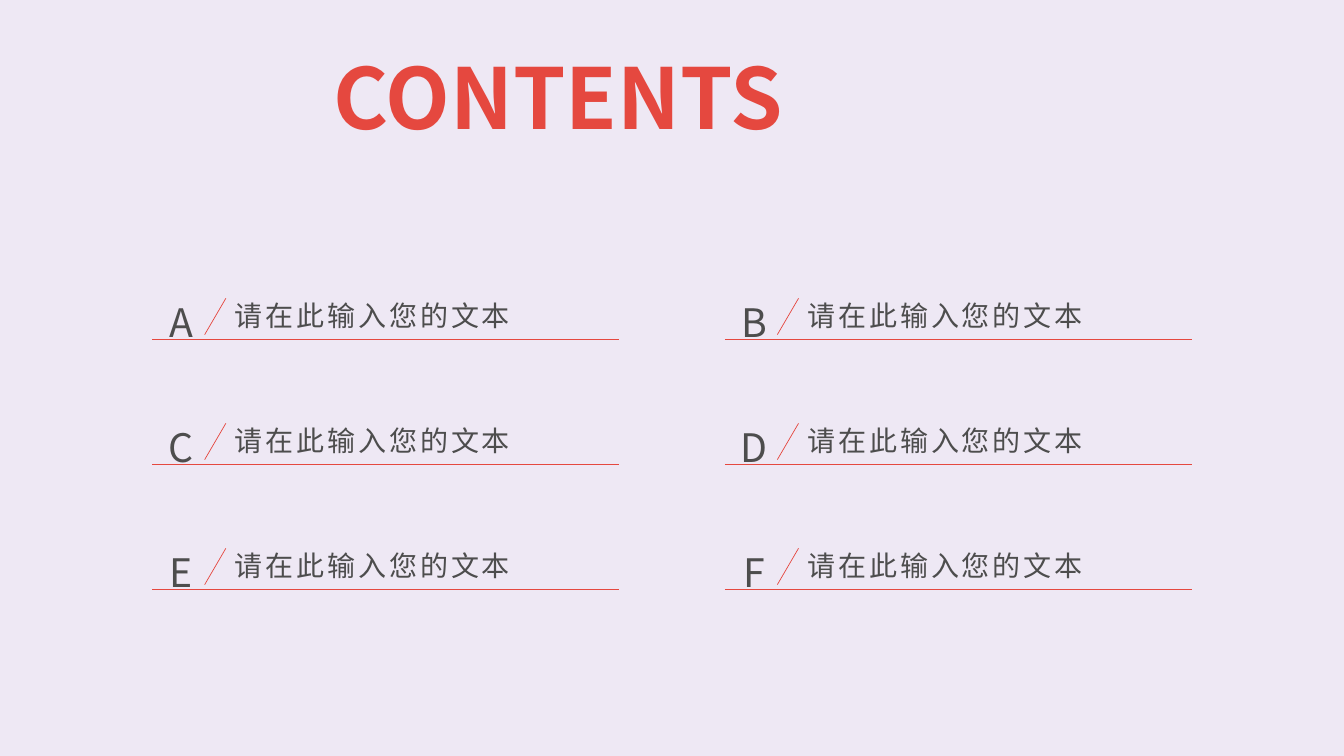
from lxml import etree
from pptx import Presentation
from pptx import util as u
from pptx.dml.color import RGBColor
from pptx.enum import shapes, text
from pptx.oxml.ns import qn

COLORS = {"paper": "EEE8F4", "accent": "E5483F", "ink": "4D4D4D"}
FONT = "Noto Sans CJK SC"
ENTRY_TEXT = "请在此输入您的文本"
LEFT, TOP = 1.51, 2.84
COLUMN_STEP, ROW_STEP = 5.68, 1.24


class ContentsPage:
    def __init__(self, deck):
        self.page = deck.slides.add_slide(deck.slide_layouts[5])
        fill = self.page.background.fill
        fill.solid()
        fill.fore_color.rgb = self.color("paper")

    def color(self, name):
        return RGBColor.from_string(COLORS[name])

    def format_text(self, box, size, color, anchor, align, bold=False, spacing=0):
        """Style the single paragraph of a box; spacing is in points."""
        box.text_frame.word_wrap = True
        box.text_frame.vertical_anchor = anchor
        para = box.text_frame.paragraphs[0]
        para.alignment = align
        span = para.runs[0]
        span.font.size = u.Pt(size)
        span.font.bold = bold
        span.font.color.rgb = self.color(color)
        span.font.name = FONT
        properties = span.font._element
        etree.SubElement(properties, qn("a:ea")).set("typeface", FONT)
        if spacing:
            properties.set("spc", str(spacing * 100))
        return para

    def title(self, words, left, top, width, height):
        box = self.page.shapes.title
        box.left, box.top = u.Inches(left), u.Inches(top)
        box.width, box.height = u.Inches(width), u.Inches(height)
        box.text_frame.text = words
        box.text_frame.auto_size = text.MSO_AUTO_SIZE.NONE
        para = self.format_text(box, 60, "accent", text.MSO_ANCHOR.TOP,
                                text.PP_ALIGN.JUSTIFY, bold=True)
        para.line_spacing = 0.88

    def label(self, words, left, top, width, height, inset=0):
        box = self.page.shapes.add_textbox(
            u.Inches(left), u.Inches(top), u.Inches(width), u.Inches(height))
        frame = box.text_frame
        frame.margin_left = u.Inches(inset)
        frame.margin_top = frame.margin_right = frame.margin_bottom = 0
        frame.text = words
        return box

    def line(self, x1, y1, x2, y2):
        rule = self.page.shapes.add_connector(
            shapes.MSO_CONNECTOR.STRAIGHT,
            u.Inches(x1), u.Inches(y1), u.Inches(x2), u.Inches(y2))
        rule.line.color.rgb = self.color("accent")
        rule.line.width = u.Pt(0.5)
        etree.SubElement(rule._element.spPr, qn("a:effectLst"))

    def entry(self, letter, words, left, top):
        """Draw an underlined entry: letter, slash and words."""
        self.line(left, top + 0.53, left + 4.63, top + 0.53)
        box = self.label(words, left + 0.74, top + 0.04, 3.89, 0.49, inset=0.08)
        self.format_text(box, 20, "ink", text.MSO_ANCHOR.MIDDLE,
                         text.PP_ALIGN.LEFT, spacing=2)
        self.line(left + 0.73, top + 0.12, left + 0.52, top + 0.48)
        box = self.label(letter, left, top, 0.58, 0.59)
        para = self.format_text(box, 28, "ink", text.MSO_ANCHOR.BOTTOM,
                                text.PP_ALIGN.CENTER)
        para.line_spacing = 1.3


def main():
    deck = Presentation()
    deck.slide_width, deck.slide_height = u.Inches(13.33), u.Inches(7.5)
    contents = ContentsPage(deck)
    contents.title("CONTENTS", 3.21, 0.53, 6.91, 1.11)
    for index, letter in enumerate("ABCDEF"):
        row, column = divmod(index, 2)
        contents.entry(letter, ENTRY_TEXT,
                       LEFT + column * COLUMN_STEP, TOP + row * ROW_STEP)
    deck.save("out.pptx")


if __name__ == "__main__":
    main()
